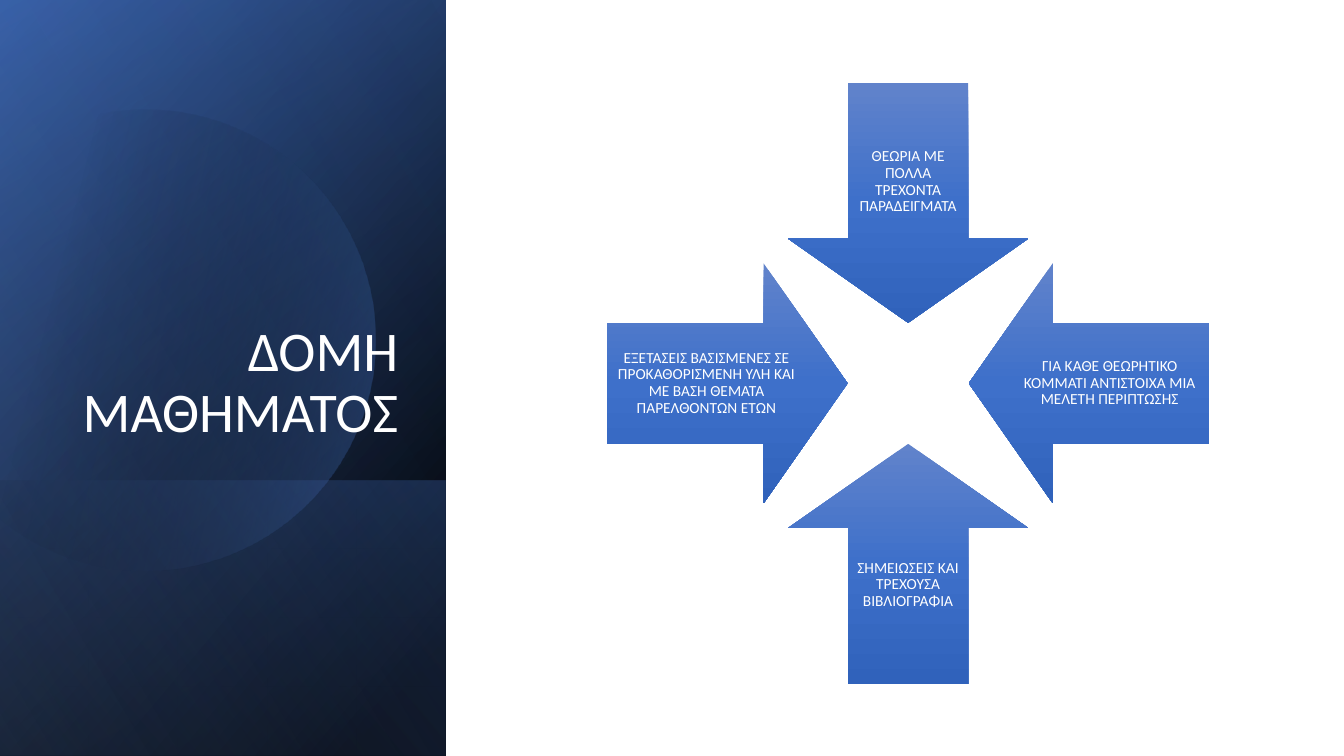
import math

import pptx
import pptx.dml.color
import pptx.enum.shapes
import pptx.enum.text
import pptx.oxml
import pptx.oxml.ns
import pptx.util

Pt = pptx.util.Pt
SHAPE = pptx.enum.shapes.MSO_SHAPE
ALIGN = pptx.enum.text.PP_ALIGN
ANCHOR = pptx.enum.text.MSO_ANCHOR

FONT = "Calibri"
COLOURS = {
    "black": "000000",
    "white": "FFFFFF",
    "navy": "2F5597",
    "blue": "4472C4",
    "pale": "8FAADC",
    "arrow_top": "6183CB",
    "arrow_middle": "3E70CA",
    "arrow_bottom": "3062BB",
}

SLIDE_W, SLIDE_H = 960, 540
PANEL_W = 318.5
BAND_TOP = 343
CIRCLE_X, CIRCLE_Y, CIRCLE_R = 104, 243, 164.5

# Cross of arrows: centre, arrow size and distances from the centre
CROSS_X, CROSS_Y = 648.7, 273.8
ARROW_SIZE, ARROW_REACH = 171.5, 129
LABEL_LENGTH, LABEL_BREADTH, LABEL_REACH = 141, 86, 144

# Direction from the centre, rotation of the down arrow, label
ARROWS = [
    (0, -1, 0, "ΘΕΩΡΙΑ ΜΕ ΠΟΛΛΑ ΤΡΕΧΟΝΤΑ ΠΑΡΑΔΕΙΓΜΑΤΑ"),
    (1, 0, 90, "ΓΙΑ ΚΆΘΕ ΘΕΩΡΗΤΙΚΟ ΚΟΜΜΑΤΙ ΑΝΤΙΣΤΟΙΧΑ ΜΙΑ ΜΕΛΕΤΗ ΠΕΡΙΠΤΩΣΗΣ"),
    (0, 1, 180, "ΣΗΜΕΙΩΣΕΙΣ ΚΑΙ ΤΡΕΧΟΥΣΑ ΒΙΒΛΙΟΓΡΑΦΙΑ"),
    (-1, 0, 270, "ΕΞΕΤΑΣΕΙΣ ΒΑΣΙΣΜΕΝΕΣ ΣΕ ΠΡΟΚΑΘΟΡΙΣΜΕΝΗ ΥΛΗ ΚΑΙ ΜΕ ΒΑΣΗ ΘΕΜΑΤΑ ΠΑΡΕΛΘΟΝΤΩΝ ΕΤΩΝ"),
]


def paint_gradient(shape, angle, stops):
    """Fill with stops of (position %, colour name, opacity %)."""
    shape.shadow.inherit = False
    shape.line.fill.background()
    shape.fill.solid()
    stop_xml = "".join(
        f'<a:gs pos="{position * 1000}"><a:srgbClr val="{COLOURS[colour]}">'
        f'<a:alpha val="{opacity * 1000}"/></a:srgbClr></a:gs>'
        for position, colour, opacity in stops
    )
    gradient = pptx.oxml.parse_xml(
        f'<a:gradFill {pptx.oxml.ns.nsdecls("a")} rotWithShape="0">'
        f'<a:gsLst>{stop_xml}</a:gsLst>'
        f'<a:lin ang="{angle * 60000}" scaled="0"/></a:gradFill>'
    )
    properties = shape._element.spPr
    properties.replace(properties.find(pptx.oxml.ns.qn("a:solidFill")), gradient)


def add_panel_layer(slide, top, angle, stops):
    layer = slide.shapes.add_shape(
        SHAPE.RECTANGLE, 0, Pt(top), Pt(PANEL_W), Pt(SLIDE_H - top))
    paint_gradient(layer, angle, stops)


def add_cut_circle(slide):
    """Circle cut off straight at the left edge of the slide."""
    cut = math.acos(-CIRCLE_X / CIRCLE_R)
    steps = 120
    angles = [cut * (2 * i / steps - 1) for i in range(steps + 1)]
    points = [(Pt(CIRCLE_X + CIRCLE_R * math.cos(a)),
               Pt(CIRCLE_Y + CIRCLE_R * math.sin(a))) for a in angles]
    builder = slide.shapes.build_freeform(*points[0])
    builder.add_line_segments(points[1:], close=True)
    paint_gradient(builder.convert_to_shape(), 14,
                   [(20, "black", 0), (100, "blue", 43)])


def add_text(slide, box, text, size, align, anchor, insets):
    frame = slide.shapes.add_textbox(*map(Pt, box)).text_frame
    frame.word_wrap = True
    frame.vertical_anchor = anchor
    frame.margin_left = frame.margin_right = Pt(insets[0])
    frame.margin_top = frame.margin_bottom = Pt(insets[1])
    paragraph = frame.paragraphs[0]
    paragraph.text = text
    paragraph.alignment = align
    paragraph.line_spacing = 0.9
    paragraph.font.name = FONT
    paragraph.font.size = Pt(size)
    paragraph.font.color.rgb = pptx.dml.color.RGBColor.from_string(COLOURS["white"])


def add_arrow(slide, dx, dy, rotation, label):
    arrow = slide.shapes.add_shape(
        SHAPE.DOWN_ARROW,
        Pt(CROSS_X + dx * ARROW_REACH - ARROW_SIZE / 2),
        Pt(CROSS_Y + dy * ARROW_REACH - ARROW_SIZE / 2),
        Pt(ARROW_SIZE), Pt(ARROW_SIZE))
    arrow.adjustments[0] = 0.5
    arrow.adjustments[1] = 0.35
    arrow.rotation = rotation
    paint_gradient(arrow, 90, [(0, "arrow_top", 100), (50, "arrow_middle", 100),
                               (100, "arrow_bottom", 100)])

    width, height = ((LABEL_LENGTH, LABEL_BREADTH) if dx
                     else (LABEL_BREADTH, LABEL_LENGTH))
    box = (CROSS_X + dx * LABEL_REACH - width / 2,
           CROSS_Y + dy * LABEL_REACH - height / 2, width, height)
    add_text(slide, box, label, 11, ALIGN.CENTER, ANCHOR.MIDDLE, (6.2, 6.2))


def main():
    deck = pptx.Presentation()
    deck.slide_width, deck.slide_height = Pt(SLIDE_W), Pt(SLIDE_H)
    slide = deck.slides.add_slide(deck.slide_layouts[6])

    # Dark panel built from translucent layers
    add_panel_layer(slide, 0, 220, [(8, "black", 100), (100, "navy", 100)])
    add_panel_layer(slide, 0, 240, [(0, "black", 0), (99, "blue", 46)])
    add_panel_layer(slide, BAND_TOP, 140, [(2, "blue", 29), (100, "black", 30)])
    add_cut_circle(slide)
    add_panel_layer(slide, 0, 150, [(0, "black", 0), (99, "pale", 11)])

    # Title
    add_text(slide, (46, 132.5, 245.5, 188.5), "ΔΟΜΗ ΜΑΘΗΜΑΤΟΣ", 40,
             ALIGN.RIGHT, ANCHOR.BOTTOM, (7.2, 3.6))

    # Four arrows pointing to the centre
    for dx, dy, rotation, label in ARROWS:
        add_arrow(slide, dx, dy, rotation, label)

    deck.save("out.pptx")


if __name__ == "__main__":
    main()
